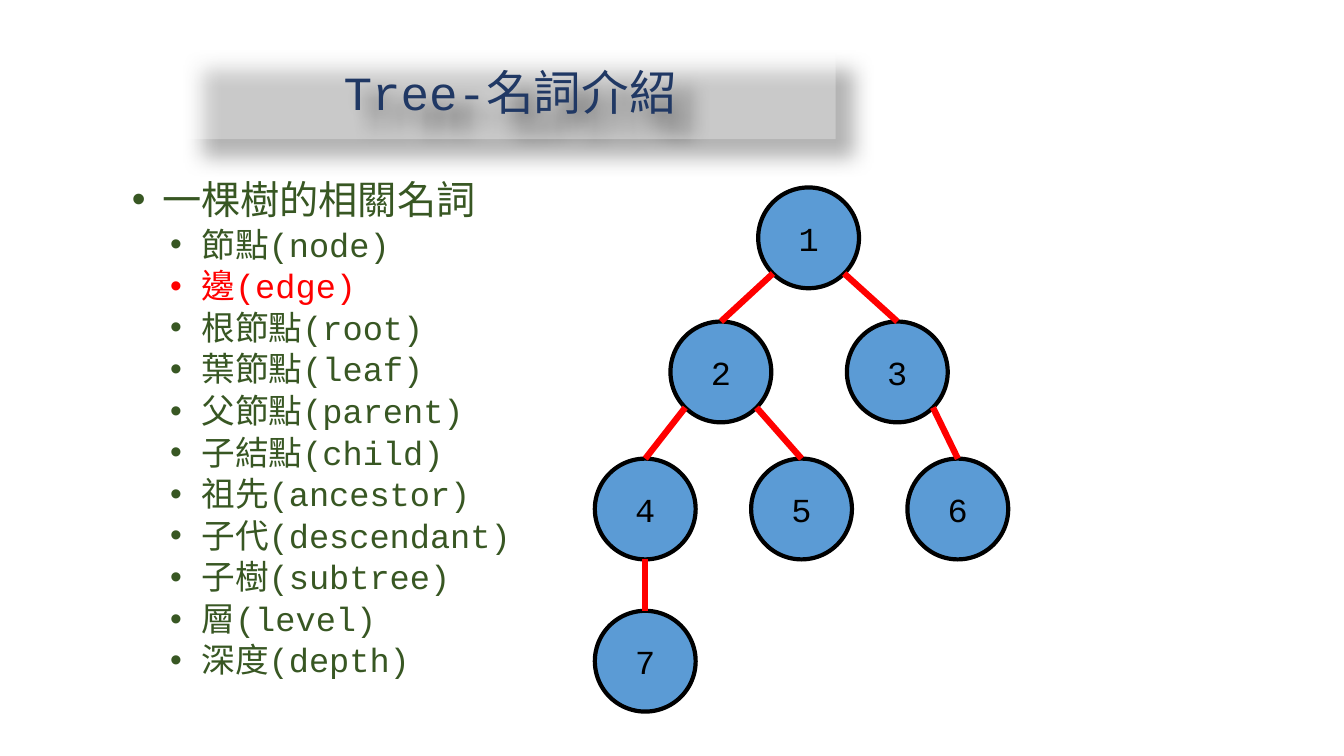
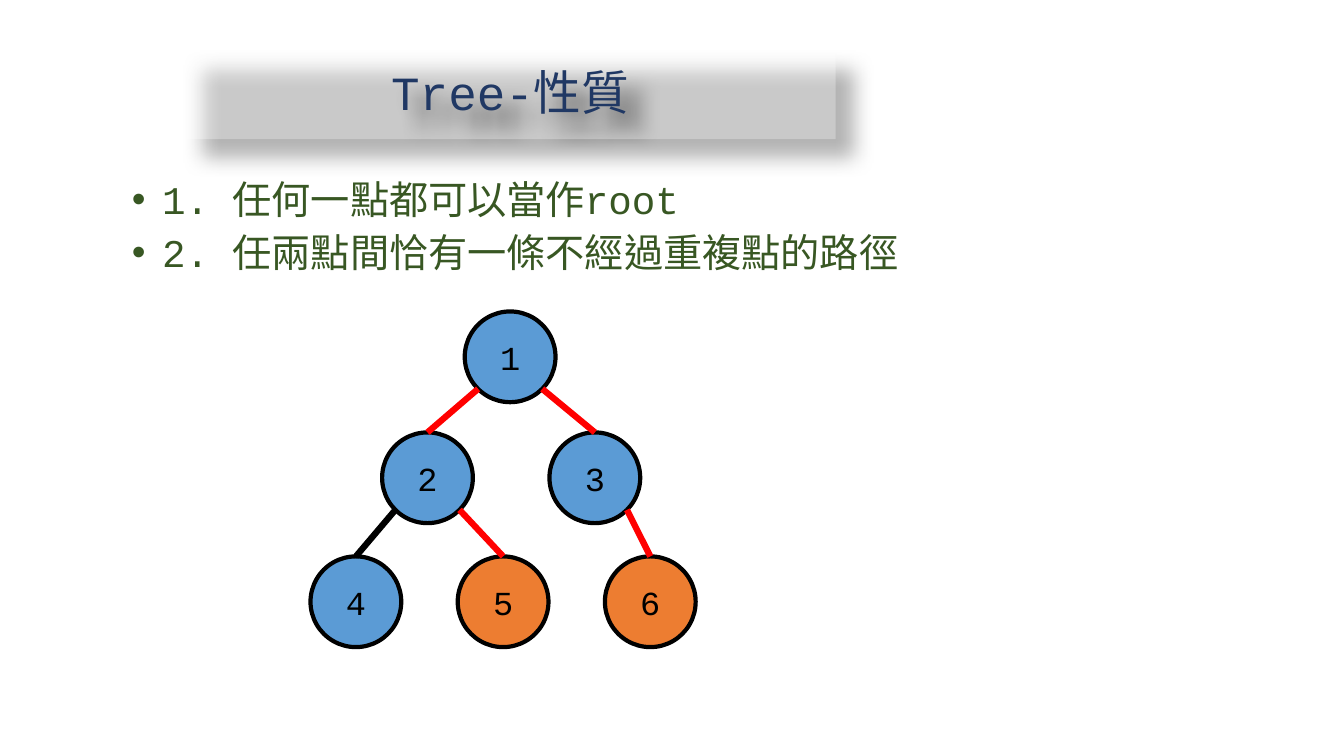
from dataclasses import dataclass
from math import sqrt

from lxml import etree
from pptx import Presentation
from pptx import util as u
from pptx.dml import color
from pptx.enum import lang, shapes, text
from pptx.oxml import ns


@dataclass(frozen=True)
class Theme:
    font: str = "Courier New"
    bullet_font: str = "Arial"
    title_color: str = "203864"
    body_color: str = "385723"
    accent: str = "FF0000"
    band: str = "FFFFFF"
    black: str = "000000"
    node: str = "5B9BD5"
    node_marked: str = "ED7D31"
    title_size: int = 34
    # Per bullet level: size, left margin, hanging indent, space before
    levels: tuple = ((28, 0.3, 0.3, 7.5), (24, 0.69, 0.31, 3.8))
    node_size: int = 24
    outline: float = 3
    edge: float = 4.5


def rgb(value):
    return color.RGBColor.from_string(value)


def add_xml(parent, tag, **attributes):
    return etree.SubElement(parent, ns.qn(tag), attributes)


class Deck:
    def __init__(self, theme):
        self.theme = theme
        self.presentation = Presentation()
        self.presentation.slide_width = u.Inches(13.33)
        self.presentation.slide_height = u.Inches(7.5)
        self.slide = None

    def new_slide(self, title):
        self.slide = self.presentation.slides.add_slide(self.presentation.slide_layouts[6])
        self.title(title)

    def text_run(self, paragraph, content, size, ink):
        run = paragraph.add_run()
        run.text = content
        run.font.name = self.theme.font
        run.font.size = u.Pt(size)
        run.font.color.rgb = rgb(ink)
        run.font.language_id = lang.MSO_LANGUAGE_ID.TRADITIONAL_CHINESE

    def shape(self, kind, box, fill):
        shape = self.slide.shapes.add_shape(kind, *map(u.Inches, box))
        shape.shadow.inherit = False
        shape.fill.solid()
        shape.fill.fore_color.rgb = rgb(fill)
        shape.text_frame.word_wrap = True
        shape.text_frame.vertical_anchor = text.MSO_ANCHOR.MIDDLE
        shape.text_frame.paragraphs[0].alignment = text.PP_ALIGN.CENTER
        return shape

    def title(self, content):
        theme = self.theme
        band = self.shape(shapes.MSO_SHAPE.RECTANGLE, (1.83, 0.51, 6.46, 0.87), theme.band)
        band.line.fill.background()
        properties = band._element.spPr
        fill = properties.find(ns.qn("a:solidFill"))
        add_xml(fill[0], "a:alpha", val="30000")
        # Soft shadow down to the right
        shadow = add_xml(properties.find(ns.qn("a:effectLst")), "a:outerShdw",
                         blurRad=str(u.Pt(15)), dist=str(u.Pt(18)),
                         dir="2700000", algn="tl", rotWithShape="0")
        add_xml(add_xml(shadow, "a:srgbClr", val=theme.black), "a:alpha", val="30000")
        paragraph = band.text_frame.paragraphs[0]
        paragraph.line_spacing = 0.9
        self.text_run(paragraph, content, theme.title_size, theme.title_color)

    def bullets(self, items, height, marked=()):
        """Add (level, content) items; marked ones take the accent colour."""
        theme = self.theme
        box = self.slide.shapes.add_textbox(*map(u.Inches, (1.21, 1.74, 11.5, height)))
        frame = box.text_frame
        frame.word_wrap = True
        for index, (level, content) in enumerate(items):
            size, margin, hanging, before = theme.levels[level]
            paragraph = frame.add_paragraph() if index else frame.paragraphs[0]
            paragraph.level = level
            properties = paragraph._p.get_or_add_pPr()
            properties.set("marL", str(u.Inches(margin)))
            properties.set("indent", str(-u.Inches(hanging)))
            add_xml(properties, "a:buFont", typeface=theme.bullet_font)
            add_xml(properties, "a:buChar", char="•")
            paragraph.line_spacing = 0.9
            paragraph.space_before = u.Pt(before if index else 0)
            ink = theme.accent if content in marked else theme.body_color
            self.text_run(paragraph, content, size, ink)

    def node(self, label, center, diameter, fill):
        x, y = center
        box = (x - diameter / 2, y - diameter / 2, diameter, diameter)
        circle = self.shape(shapes.MSO_SHAPE.OVAL, box, fill)
        circle.line.color.rgb = rgb(self.theme.black)
        circle.line.width = u.Pt(self.theme.outline)
        self.text_run(circle.text_frame.paragraphs[0], str(label),
                      self.theme.node_size, self.theme.black)

    def edge(self, parent, child, diameter, ink):
        """Join the parent's lower side facing the child to the child's top."""
        radius = diameter / 2
        side = (child[0] > parent[0]) - (child[0] < parent[0])
        diagonal = radius / sqrt(2)
        start = (parent[0] + side * diagonal, parent[1] + (diagonal if side else radius))
        end = (child[0], child[1] - radius)
        line = self.slide.shapes.add_connector(
            shapes.MSO_CONNECTOR.STRAIGHT, *map(u.Inches, start + end))
        line.line.color.rgb = rgb(ink)
        line.line.width = u.Pt(self.theme.edge)
        add_xml(line._element.spPr, "a:effectLst")

    def tree(self, centers, edges, diameter, marked_nodes=(), plain_edges=()):
        theme = self.theme
        for label, center in centers.items():
            fill = theme.node_marked if label in marked_nodes else theme.node
            self.node(label, center, diameter, fill)
        for parent, child in edges:
            ink = theme.black if (parent, child) in plain_edges else theme.accent
            self.edge(centers[parent], centers[child], diameter, ink)


def main():
    deck = Deck(Theme())
    edges = [(1, 2), (1, 3), (2, 4), (2, 5), (3, 6)]

    # Terms of a tree, with its edges highlighted
    deck.new_slide("Tree-名詞介紹")
    terms = ["節點(node)", "邊(edge)", "根節點(root)", "葉節點(leaf)",
             "父節點(parent)", "子結點(child)", "祖先(ancestor)",
             "子代(descendant)", "子樹(subtree)", "層(level)", "深度(depth)"]
    deck.bullets([(0, "一棵樹的相關名詞")] + [(1, term) for term in terms],
                 5.32, marked=("邊(edge)",))
    deck.tree({1: (8.02, 2.36), 2: (7.15, 3.69), 3: (8.9, 3.69),
               4: (6.4, 5.05), 5: (7.95, 5.05), 6: (9.5, 5.05), 7: (6.4, 6.56)},
              edges + [(4, 7)], 1)

    # Properties of a tree, with the path from 5 to 6 highlighted
    deck.new_slide("Tree-性質")
    deck.bullets([(0, "1. 任何一點都可以當作root"),
                  (0, "2. 任兩點間恰有一條不經過重複點的路徑")], 5.06)
    deck.tree({1: (5.06, 3.54), 2: (4.24, 4.74), 3: (5.9, 4.74),
               4: (3.53, 5.97), 5: (4.99, 5.97), 6: (6.45, 5.97)},
              edges, 0.9, marked_nodes=(5, 6), plain_edges=((2, 4),))

    deck.presentation.save("out.pptx")


if __name__ == "__main__":
    main()
